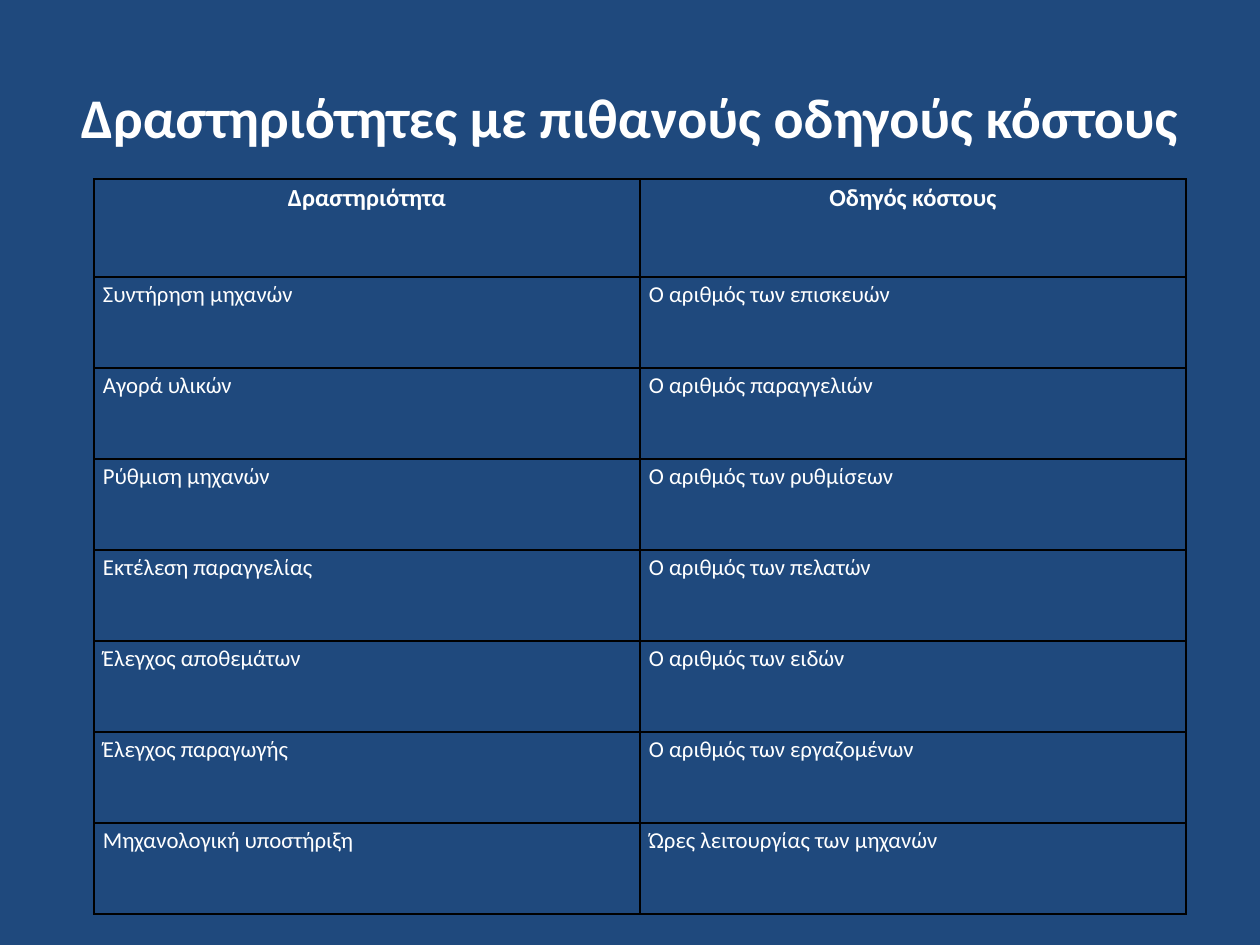
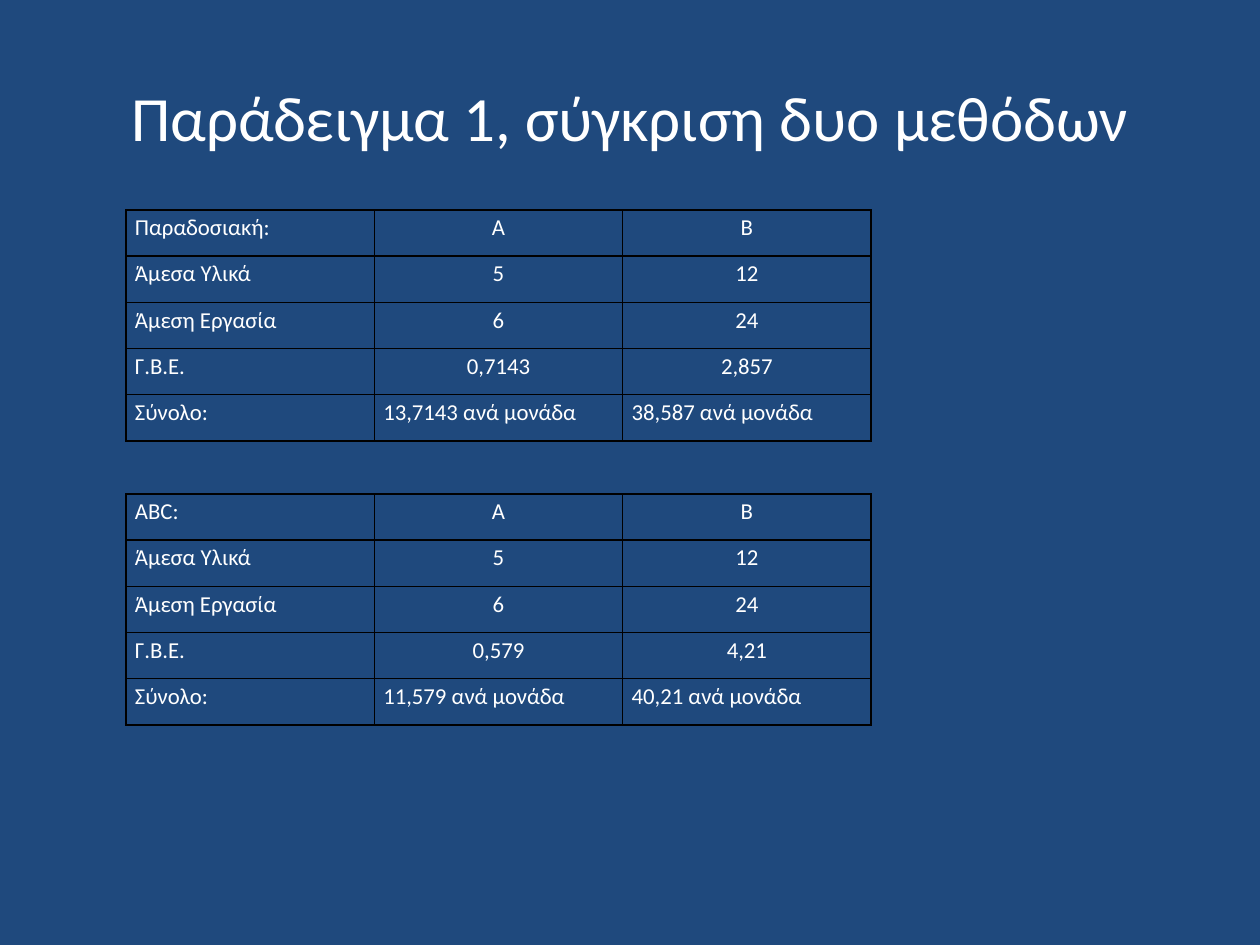
import pptx
import pptx.util
import pptx.oxml
import pptx.dml.color
import pptx.enum.text
from dataclasses import dataclass

# Content
TASKS = [
    ("Δραστηριότητα", "Οδηγός κόστους"),
    ("Συντήρηση μηχανών", "Ο αριθμός των επισκευών"),
    ("Αγορά υλικών", "Ο αριθμός παραγγελιών"),
    ("Ρύθμιση μηχανών", "Ο αριθμός των ρυθμίσεων"),
    ("Εκτέλεση παραγγελίας", "Ο αριθμός των πελατών"),
    ("Έλεγχος αποθεμάτων", "Ο αριθμός των ειδών"),
    ("Έλεγχος παραγωγής", "Ο αριθμός των εργαζομένων"),
    ("Μηχανολογική υποστήριξη", "Ώρες λειτουργίας των μηχανών"),
]


def costs(name, over, total):
    """Rows of one costing method; only overhead and totals differ."""
    return [
        (name, "Α", "Β"),
        ("Άμεσα Υλικά", "5", "12"),
        ("Άμεση Εργασία", "6", "24"),
        ("Γ.Β.Ε.", *over),
        ("Σύνολο:", *(f"{sum_} ανά μονάδα" for sum_ in total)),
    ]


METHODS = [
    costs("Παραδοσιακή:", ("0,7143", "2,857"), ("13,7143", "38,587")),
    costs("ABC:", ("0,579", "4,21"), ("11,579", "40,21")),
]


# Theme
@dataclass(frozen=True)
class Theme:
    back: str = "1F497D"
    text: str = "FFFFFF"
    line: str = "000000"
    font: str = "Calibri"
    lead: int = 32
    title: int = 36
    head: int = 14
    body: int = 13
    edge: int = 1
    space: float = 1.15


LOOK = Theme()
ALIGN = pptx.enum.text.PP_ALIGN
NS = "http://schemas.openxmlformats.org/drawingml/2006/main"

# Layout, in px
DPI = 126
PAGE = (1260, 945)
TITLE = (63, 38, 1134, 157)
PAD = 9


def px(num):
    return pptx.util.Emu(round(num * 914400 / DPI))


def rgb(code):
    return pptx.dml.color.RGBColor.from_string(code)


def paint(back, code):
    back.fill.solid()
    back.fill.fore_color.rgb = rgb(code)


def place(shape, box):
    shape.left, shape.top, shape.width, shape.height = map(px, box)


def write(frame, text, size=LOOK.body, bold=False, align=ALIGN.LEFT, space=None):
    par = frame.paragraphs[0]
    par.alignment = align
    par.line_spacing = space
    run = par.add_run()
    run.text = text
    font = run.font
    font.name, font.size, font.bold = LOOK.font, pptx.util.Pt(size), bold
    font.color.rgb = rgb(LOOK.text)


def frame_cell(cell):
    """Clear the fill, set the margins and draw all four borders."""
    cell.fill.background()
    cell.margin_left = cell.margin_right = px(PAD)
    cell.margin_top = cell.margin_bottom = 0
    props = cell._tc.get_or_add_tcPr()
    for spot, side in enumerate("LRTB"):
        props.insert(spot, pptx.oxml.parse_xml(
            f'<a:ln{side} xmlns:a="{NS}" w="{pptx.util.Pt(LOOK.edge)}">'
            f'<a:solidFill><a:srgbClr val="{LOOK.line}"/></a:solidFill>'
            f'</a:ln{side}>'))


def add_grid(slide, rows, left, top, width, highs, style):
    """Draw a table; style(row, col) gives the text format of a cell."""
    count = len(rows[0])
    grid = slide.shapes.add_table(
        len(rows), count, px(left), px(top), px(width), px(sum(highs))).table
    grid.first_row = grid.horz_banding = False
    for col in grid.columns:
        col.width = px(width / count)
    for r, (row, high) in enumerate(zip(rows, highs)):
        grid.rows[r].height = px(high)
        for c, text in enumerate(row):
            cell = grid.cell(r, c)
            frame_cell(cell)
            write(cell.text_frame, text, space=LOOK.space, **style(r, c))


def task_style(row, col):
    if row == 0:
        return dict(size=LOOK.head, bold=True, align=ALIGN.CENTER)
    return {}


def cost_style(row, col):
    last = len(METHODS[0]) - 1
    return dict(align=ALIGN.CENTER) if col and row < last else {}


def add_slide(deck, title, **style):
    slide = deck.slides.add_slide(deck.slide_layouts[5])
    head = slide.shapes.title
    place(head, TITLE)
    head.text_frame.vertical_anchor = pptx.enum.text.MSO_ANCHOR.MIDDLE
    head.text_frame.auto_size = pptx.enum.text.MSO_AUTO_SIZE.NONE
    write(head.text_frame, title, align=ALIGN.CENTER, **style)
    return slide


def main():
    deck = pptx.Presentation()
    deck.slide_width, deck.slide_height = map(px, PAGE)
    paint(deck.slide_master.background, LOOK.back)

    # Activities and cost drivers
    slide = add_slide(deck, "Δραστηριότητες με πιθανούς οδηγούς κόστους",
                      size=LOOK.lead, bold=True)
    highs = [98] + [91] * (len(TASKS) - 1)
    add_grid(slide, TASKS, 94, 179, 1092, highs, task_style)

    # Two costing methods, one below the other
    slide = add_slide(deck, "Παράδειγμα 1, σύγκριση δυο μεθόδων", size=LOOK.title)
    first, step, high = 210, 284, 231
    for spot, rows in enumerate(METHODS):
        highs = [high / len(rows)] * len(rows)
        add_grid(slide, rows, 126, first + spot * step, 745, highs, cost_style)

    deck.save("out.pptx")


if __name__ == "__main__":
    main()
